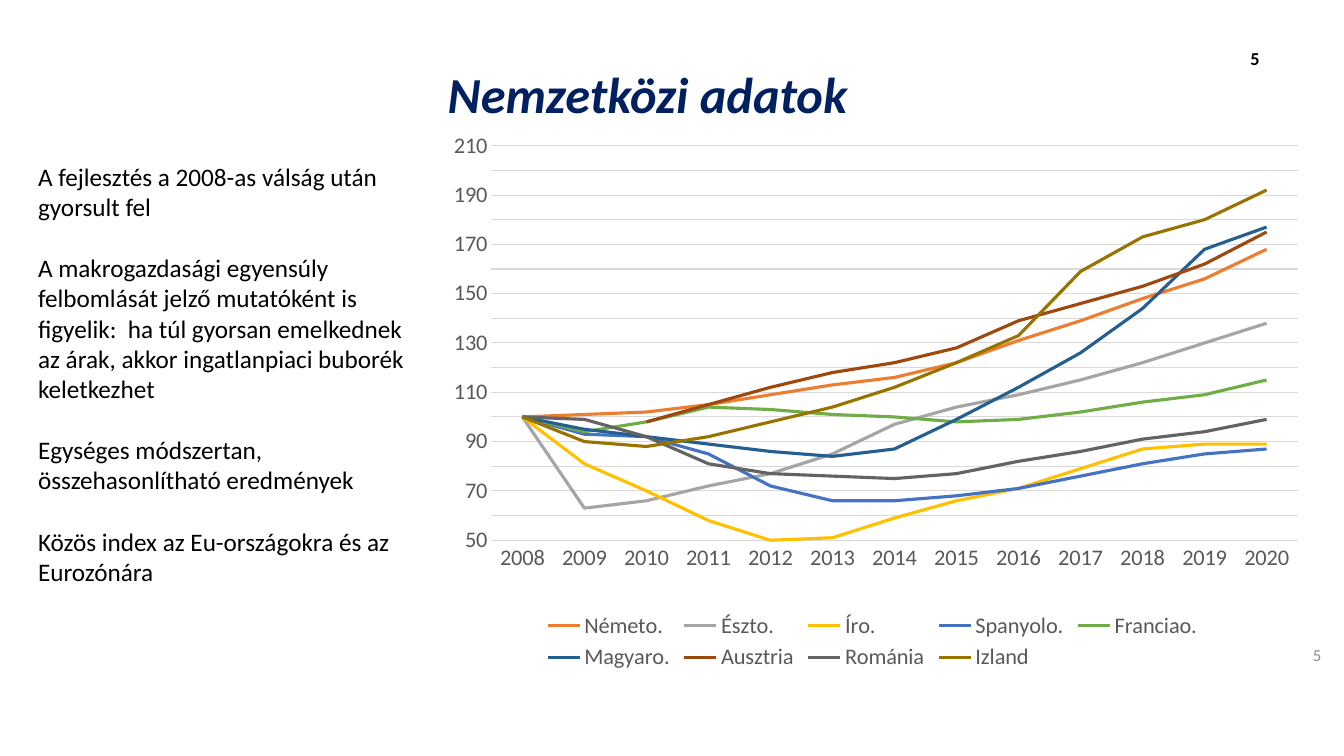
from lxml import etree
from pptx import Presentation
from pptx.chart.data import CategoryChartData
from pptx.dml.color import RGBColor
from pptx.enum.chart import (
    XL_CHART_TYPE as ChartType,
    XL_LEGEND_POSITION as LegendPosition,
    XL_MARKER_STYLE as MarkerStyle,
    XL_TICK_MARK as TickMark,
)
from pptx.enum.text import MSO_ANCHOR as Anchor, PP_ALIGN as Align
from pptx.oxml.ns import qn
from pptx.util import Cm, Pt

COLORS = {
    "title": "002060",
    "text": "000000",
    "page": "8C8C8C",
    "axis": "595959",
    "grid": "D9D9D9",
    "Németo.": "ED7D31",
    "Észto.": "A5A5A5",
    "Íro.": "FFC000",
    "Spanyolo.": "4472C4",
    "Franciao.": "70AD47",
    "Magyaro.": "255E91",
    "Ausztria": "9E480E",
    "Románia": "636363",
    "Izland": "997300",
}

YEARS = [str(year) for year in range(2008, 2021)]

PRICE_INDEX = {
    "Németo.": [100, 101, 102, 105, 109, 113, 116, 122, 131, 139, 148, 156, 168],
    "Észto.": [100, 63, 66, 72, 77, 85, 97, 104, 109, 115, 122, 130, 138],
    "Íro.": [100, 81, 70, 58, 50, 51, 59, 66, 71, 79, 87, 89, 89],
    "Spanyolo.": [100, 93, 92, 85, 72, 66, 66, 68, 71, 76, 81, 85, 87],
    "Franciao.": [100, 94, 98, 104, 103, 101, 100, 98, 99, 102, 106, 109, 115],
    "Magyaro.": [100, 95, 92, 89, 86, 84, 87, 99, 112, 126, 144, 168, 177],
    "Ausztria": [100, None, 98, 105, 112, 118, 122, 128, 139, 146, 153, 162, 175],
    "Románia": [100, 99, 92, 81, 77, 76, 75, 77, 82, 86, 91, 94, 99],
    "Izland": [100, 90, 88, 92, 98, 104, 112, 122, 133, 159, 173, 180, 192],
}

STATEMENTS = [
    "A fejlesztés a 2008-as válság után gyorsult fel",
    "A makrogazdasági egyensúly felbomlását jelző mutatóként is figyelik:  "
    "ha túl gyorsan emelkednek az árak, akkor ingatlanpiaci buborék keletkezhet",
    "Egységes módszertan, összehasonlítható eredmények",
    "Közös index az Eu-országokra és az Eurozónára",
]


class SlideBuilder:
    """Hold the style and the current slide, and add elements to it."""

    typeface = "Calibri"

    def __init__(self, presentation):
        """Start a title-only slide."""
        self.slide = presentation.slides.add_slide(presentation.slide_layouts[5])

    def style_font(self, font, size, color, bold=False, italic=False):
        """Set every visible property of a font."""
        font.name = self.typeface
        font.size = Pt(size)
        font.bold = bold
        font.italic = italic
        font.color.rgb = RGBColor.from_string(COLORS[color])

    def style_line(self, line, color, width):
        """Set the colour and width of a line."""
        line.color.rgb = RGBColor.from_string(COLORS[color])
        line.width = Pt(width)

    def fill_text(self, shape, texts, size, color, align=Align.LEFT,
                  anchor=Anchor.TOP, gap=0, bold=False, italic=False):
        """Write paragraphs into a shape."""
        frame = shape.text_frame
        frame.word_wrap = True
        frame.vertical_anchor = anchor
        frame.text = "\n".join(texts)
        for index, paragraph in enumerate(frame.paragraphs):
            paragraph.alignment = align
            paragraph.space_before = Pt(gap if index else 0)
            self.style_font(paragraph.font, size, color, bold, italic)

    def title(self, text, left, top, width, height):
        """Place and format the title placeholder."""
        shape = self.slide.shapes.title
        shape.left, shape.top = Cm(left), Cm(top)
        shape.width, shape.height = Cm(width), Cm(height)
        self.fill_text(shape, [text], 36, "title", Align.CENTER,
                       bold=True, italic=True)

    def text(self, texts, left, top, width, height, **style):
        """Add a text box."""
        shape = self.slide.shapes.add_textbox(
            Cm(left), Cm(top), Cm(width), Cm(height))
        self.fill_text(shape, texts, **style)

    def line_chart(self, categories, series_values, left, top, width, height):
        """Add a line chart with a legend below it."""
        data = CategoryChartData(number_format="0")
        data.categories = categories
        for name, values in series_values.items():
            data.add_series(name, values)
        chart = self.slide.shapes.add_chart(
            ChartType.LINE, Cm(left), Cm(top), Cm(width), Cm(height), data).chart
        chart.has_title = False
        self.style_font(chart.font, 16, "axis")
        chart.has_legend = True
        chart.legend.position = LegendPosition.BOTTOM
        chart.legend.include_in_layout = False
        self.style_font(chart.legend.font, 16, "axis")
        self.style_axes(chart)
        self.place_plot(chart, x=0.07, y=0.02, w=0.91, h=0.73)
        plot = chart.plots[0]
        plot.vary_by_categories = False
        for series in plot.series:
            series.smooth = False
            series.marker.style = MarkerStyle.NONE
            self.style_line(series.format.line, series.name, 2.25)

    def style_axes(self, chart):
        """Format both axes and the gridlines of a chart."""
        for axis in (chart.category_axis, chart.value_axis):
            axis.major_tick_mark = axis.minor_tick_mark = TickMark.NONE
            self.style_font(axis.tick_labels.font, 16, "axis")
        self.style_line(chart.category_axis.format.line, "grid", 0.75)
        values = chart.value_axis
        values.minimum_scale, values.maximum_scale = 50, 210
        values.major_unit = 10
        values.tick_labels.number_format = "0"
        values.tick_labels.number_format_is_linked = False
        values.format.line.fill.background()
        values.has_major_gridlines = True
        self.style_line(values.major_gridlines.format.line, "grid", 0.75)

    def place_plot(self, chart, **fractions):
        """Fix the inner plot area as fractions of the chart."""
        area = chart.element.find(".//" + qn("c:plotArea"))
        for layout in area.findall(qn("c:layout")):
            area.remove(layout)
        layout = etree.Element(qn("c:layout"))
        area.insert(0, layout)
        manual = etree.SubElement(layout, qn("c:manualLayout"))
        settings = {"layoutTarget": "inner", "xMode": "edge", "yMode": "edge"}
        for tag, value in {**settings, **fractions}.items():
            etree.SubElement(manual, qn("c:" + tag)).set("val", str(value))


def main():
    """Build and save the presentation."""
    presentation = Presentation()
    presentation.slide_width, presentation.slide_height = Cm(33.87), Cm(19.05)
    builder = SlideBuilder(presentation)
    builder.text(["5"], 25.93, 16, 7.62, 1.02, size=12, color="page",
                 align=Align.RIGHT, anchor=Anchor.MIDDLE)
    builder.title("Nemzetközi adatok", 0, 1.47, 32.64, 1.8)
    builder.text(["5"], 30.99, 0.97, 1, 1.02, size=13, color="text",
                 align=Align.RIGHT, anchor=Anchor.MIDDLE, bold=True)
    builder.text(STATEMENTS, 0.71, 3.94, 10.11, 11.79, size=18, color="text",
                 gap=22)
    builder.line_chart(YEARS, PRICE_INDEX, 10.82, 3.33, 22.33, 13.69)
    presentation.save("out.pptx")


if __name__ == "__main__":
    main()
